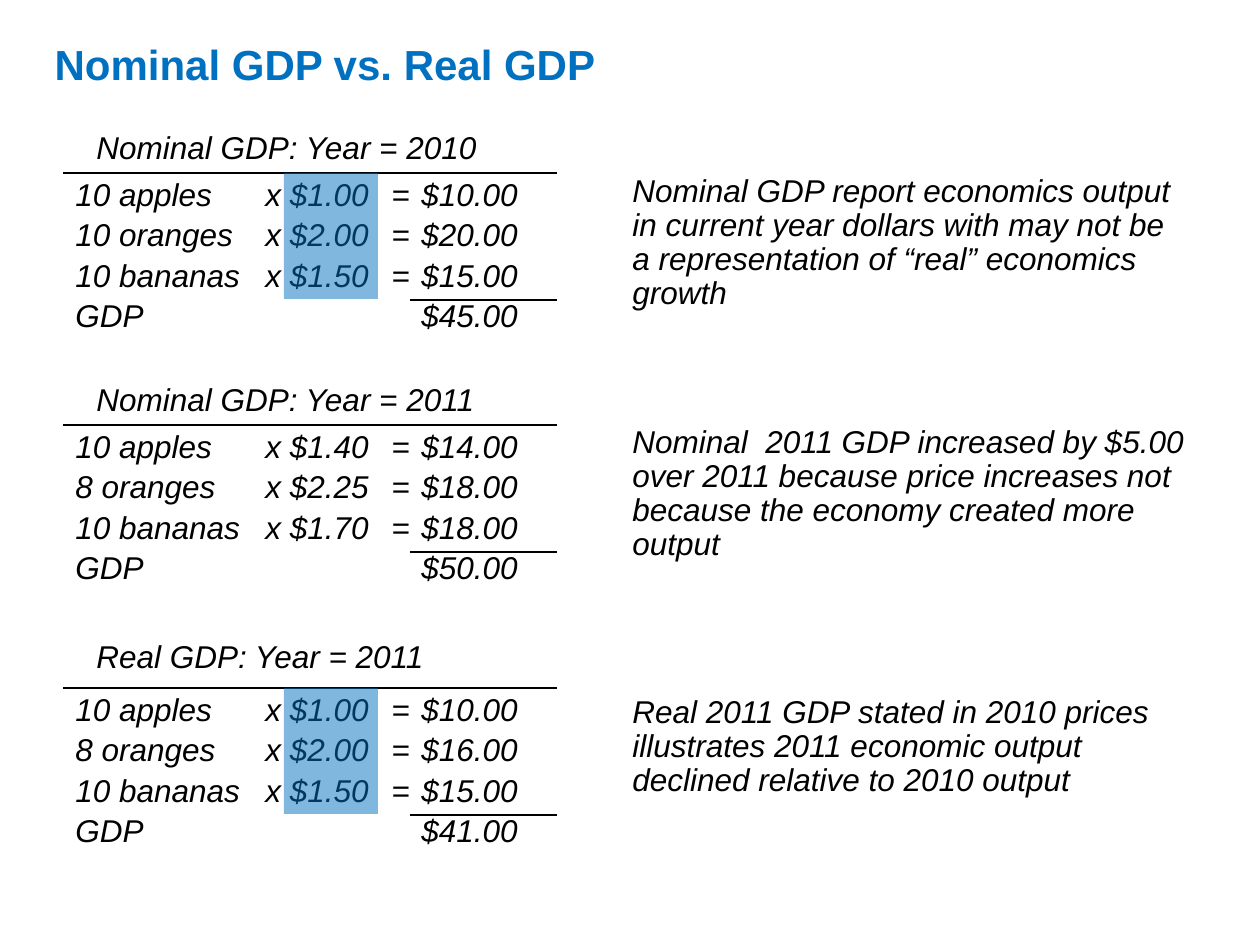
from lxml import etree
from pptx import Presentation
from pptx import util as u
from pptx.dml.color import RGBColor
from pptx.enum import shapes, text
from pptx.oxml.ns import qn

PX = 914400 / 126  # EMU in one px
THEME = {
    "font": "Arial", "blue": RGBColor(0x00, 0x70, 0xC0), "black": RGBColor(0, 0, 0),
    "head": u.Pt(24), "body": u.Pt(18), "rule": u.Pt(0.75),
}
TITLE = {"name": THEME["font"], "size": THEME["head"], "bold": True}
BODY = {"name": THEME["font"], "size": THEME["body"], "italic": True}
TABS = (190, 316, 346)

# top, gap from heading to rule, heading, rows, total, banded prices, note top, note
BLOCKS = [
    (126, 47, "Nominal GDP: Year = 2010",
     [("10 apples", "$1.00", "$10.00"), ("10 oranges", "$2.00", "$20.00"),
      ("10 bananas", "$1.50", "$15.00")], "$45.00", True, 169,
     "Nominal GDP report economics output in current year dollars with may not be "
     "a representation of “real” economics growth"),
    (378, 47, "Nominal GDP: Year = 2011",
     [("10 apples", "$1.40", "$14.00"), ("8 oranges", "$2.25", "$18.00"),
      ("10 bananas", "$1.70", "$18.00")], "$50.00", False, 420,
     "Nominal  2011 GDP increased by $5.00 over 2011 because price increases not "
     "because the economy created more output"),
    (635, 53, "Real GDP: Year = 2011",
     [("10 apples", "$1.00", "$10.00"), ("8 oranges", "$2.00", "$16.00"),
      ("10 bananas", "$1.50", "$15.00")], "$41.00", True, 690,
     "Real 2011 GDP stated in 2010 prices illustrates 2011 economic output "
     "declined relative to 2010 output"),
]


def emu(*vals):
    return [u.Emu(round(v * PX)) for v in vals]


def style(font, form, color):
    for key, val in form.items():
        setattr(font, key, val)
    font.color.rgb = color


def add_text(parent, box, lines, tabs=()):
    frame = parent.add_textbox(*emu(*box)).text_frame
    frame.word_wrap = True
    for i, line in enumerate(lines):
        para = frame.paragraphs[0] if i == 0 else frame.add_paragraph()
        run = para.add_run()
        run.text = line
        style(run.font, BODY, THEME["black"])
        para.line_spacing = 0.9
        # Space before as a share of the type size, then tab stops
        props = para._p.get_or_add_pPr()
        space = etree.SubElement(props, qn("a:spcBef"))
        etree.SubElement(space, qn("a:spcPct"), val="20000")
        if tabs:
            stops = etree.SubElement(props, qn("a:tabLst"))
            for pos in emu(*tabs):
                etree.SubElement(stops, qn("a:tab"), pos=str(pos), algn="l")


def add_rule(parent, left, right, y):
    rule = parent.add_connector(shapes.MSO_CONNECTOR.STRAIGHT, *emu(left, y, right, y))
    rule.line.color.rgb = THEME["black"]
    rule.line.width = THEME["rule"]
    etree.SubElement(rule._element.spPr, qn("a:effectLst"))


def add_band(parent, box):
    band = parent.add_shape(shapes.MSO_SHAPE.RECTANGLE, *emu(*box))
    band.shadow.inherit = False
    band.fill.solid()
    band.fill.fore_color.rgb = THEME["blue"]
    band.line.fill.background()
    color = band._element.spPr.find(".//" + qn("a:srgbClr"))
    etree.SubElement(color, qn("a:alpha"), val="50000")


def add_title(slide, box, words):
    title = slide.shapes.title
    title.left, title.top, title.width, title.height = emu(*box)
    frame = title.text_frame
    frame.text = words
    frame.vertical_anchor = text.MSO_ANCHOR.MIDDLE
    frame.auto_size = text.MSO_AUTO_SIZE.NONE
    para = frame.paragraphs[0]
    para.alignment = text.PP_ALIGN.LEFT
    style(para.runs[0].font, TITLE, THEME["blue"])


def add_sums(slide, left, top, gap, head, rows, total):
    """Heading, rule, sums and total line."""
    group = slide.shapes.add_group_shape().shapes
    base = top + gap
    lines = [f"{item}\tx {price}\t=\t{value}" for item, price, value in rows]
    add_text(group, (left, base, 536, 173), lines + [f"GDP\t\t\t{total}"], TABS)
    add_rule(group, left + 347, left + 494, base + 127)
    add_text(group, (left + 21, top, 462, 47), [head])
    add_rule(group, left, left + 494, base)


def main():
    prs = Presentation()
    prs.slide_width, prs.slide_height = emu(1260, 945)
    slide = prs.slides.add_slide(prs.slide_layouts[5])
    add_title(slide, (42, 32, 1176, 63), "Nominal GDP vs. Real GDP")
    left = 63
    for top, gap, head, rows, total, band, y, note in BLOCKS:
        add_sums(slide, left, top, gap, head, rows, total)
        add_text(slide.shapes, (620, y, 577, 150), [note])
        if band:
            add_band(slide.shapes, (left + 221, top + gap, 94, 126))
    prs.save("out.pptx")


if __name__ == "__main__":
    main()
